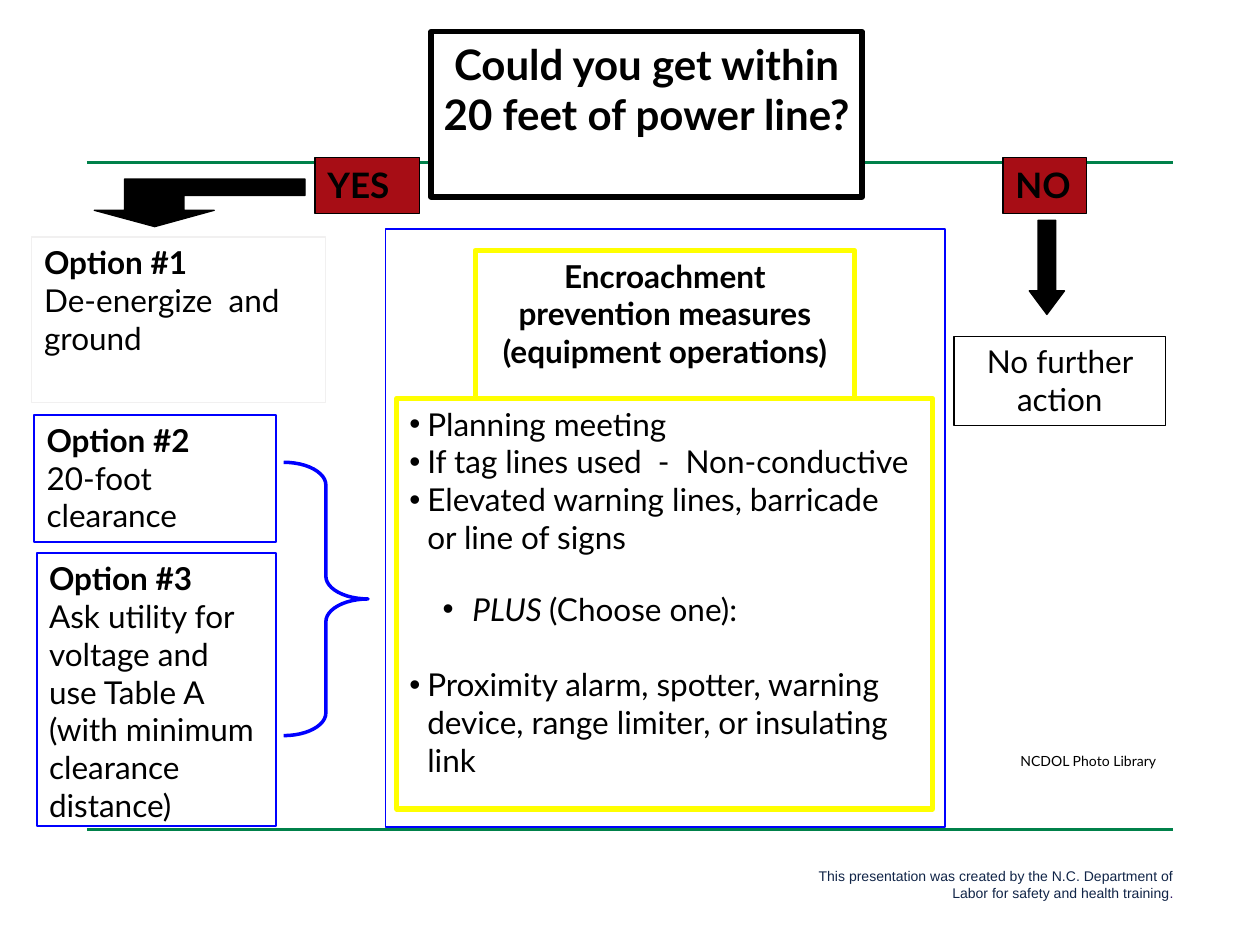
"""Build the power line encroachment decision slide."""
from lxml.etree import SubElement
from pptx import Presentation
from pptx.dml.color import RGBColor
from pptx.enum.shapes import MSO_CONNECTOR, MSO_SHAPE
from pptx.enum.text import MSO_ANCHOR, MSO_AUTO_SIZE, PP_ALIGN
from pptx.oxml.ns import qn
from pptx.util import Cm, Pt

COLORS = {
    "black": "000000", "white": "FFFFFF", "green": "00814A", "red": "A70D15",
    "blue": "0000FF", "yellow": "FFFF00", "pale": "F1F0F0",
    "navy": "102447", "purple": "2B0E62",
}


def rgb(name):
    return RGBColor.from_string(COLORS[name])


class SlideBuilder:
    font = "Lato"

    def __init__(self, slide):
        self.slide = slide

    def paint(self, shape, fill, line, width):
        if fill:
            shape.fill.solid()
            shape.fill.fore_color.rgb = rgb(fill)
        else:
            shape.fill.background()
        shape.line.color.rgb = rgb(line)
        shape.line.width = Pt(width)

    def run(self, paragraph, text, size, bold=False, italic=False, color="black", font=None):
        run = paragraph.add_run()
        run.text = text
        run.font.name = font or self.font
        run.font.size = Pt(size)
        run.font.bold = bold
        run.font.italic = italic
        run.font.color.rgb = rgb(color)

    def frame(self, shape, wrap=True):
        text_frame = shape.text_frame
        text_frame.word_wrap = wrap
        text_frame.auto_size = MSO_AUTO_SIZE.NONE
        text_frame.vertical_anchor = MSO_ANCHOR.TOP
        return text_frame

    def paragraph(self, text_frame, index, align=PP_ALIGN.LEFT):
        paragraph = text_frame.add_paragraph() if index else text_frame.paragraphs[0]
        paragraph.alignment = align
        return paragraph

    def shape(self, kind, box, fill, line, width, adjustments=()):
        shape = self.slide.shapes.add_shape(kind, *map(Cm, box))
        shape.shadow.inherit = False
        self.paint(shape, fill, line, width)
        for index, value in enumerate(adjustments):
            shape.adjustments[index] = value
        return shape

    def box(self, box, lines, fill="white", line="black", width=0.75, size=18,
            bold_lines=1, align=PP_ALIGN.LEFT, wrap=True):
        shape = self.shape(MSO_SHAPE.RECTANGLE, box, fill, line, width)
        text_frame = self.frame(shape, wrap)
        for index, text in enumerate(lines):
            paragraph = self.paragraph(text_frame, index, align)
            self.run(paragraph, text, size, bold=index < bold_lines)

    def text(self, box, runs, align=PP_ALIGN.LEFT):
        shape = self.slide.shapes.add_textbox(*map(Cm, box))
        paragraph = self.paragraph(self.frame(shape), 0, align)
        for text, color, font in runs:
            self.run(paragraph, text, 8, color=color, font=font)

    def rule(self, y):
        left, right = Cm(1.75), Cm(23.65)
        line = self.slide.shapes.add_connector(MSO_CONNECTOR.STRAIGHT, left, Cm(y), right, Cm(y))
        line.line.color.rgb = rgb("green")
        line.line.width = Pt(2)
        SubElement(line._element.spPr, qn("a:effectLst"))

    def outline(self, points):
        start, *rest = [(Cm(x), Cm(y)) for x, y in points]
        builder = self.slide.shapes.build_freeform(*start)
        builder.add_line_segments(rest, close=True)
        shape = builder.convert_to_shape()
        shape.shadow.inherit = False
        self.paint(shape, "black", "black", 0.75)

    def placeholder(self, shape, box, line):
        shape.left, shape.top, shape.width, shape.height = map(Cm, box)
        self.paint(shape, "white", line, 3)
        self.slide.shapes._spTree.append(shape._element)
        return self.frame(shape)

    def title(self, box, text):
        text_frame = self.placeholder(self.slide.shapes.title, box, "black")
        paragraph = self.paragraph(text_frame, 0, PP_ALIGN.CENTER)
        self.run(paragraph, text, 24, bold=True)

    def bullets(self, box, items):
        text_frame = self.placeholder(self.slide.placeholders[1], box, "yellow")
        for index, (lines, margin, hanging, before, after) in enumerate(items):
            paragraph = self.paragraph(text_frame, index)
            properties = paragraph._p.get_or_add_pPr()
            properties.set("marL", str(Cm(margin)))
            properties.set("indent", str(-Cm(hanging)))
            paragraph.space_before, paragraph.space_after = Pt(before), Pt(after)
            for number, runs in enumerate(lines):
                if number:
                    paragraph.add_line_break()
                for text, italic in runs:
                    self.run(paragraph, text, 18, italic=italic)
            paragraph.font.size = Pt(18)


def measure(*lines):
    return [[(line, False)] for line in lines], 0.36, 0.36, 0, 0


def main():
    presentation = Presentation()
    presentation.slide_width, presentation.slide_height = Cm(25.4), Cm(19.05)
    slide = presentation.slides.add_slide(presentation.slide_layouts[1])
    builder = SlideBuilder(slide)

    for y in (3.28, 16.72):
        builder.rule(y)
    builder.text((15.65, 17.37, 8.26, 0.94), [
        ("This presentation was created by the N.C. Department of Labor for safety "
         "and health training", "navy", "Arial"),
        (".", "purple", "Arial"),
    ], PP_ALIGN.RIGHT)

    builder.title((8.69, 0.64, 8.69, 3.33), "Could you get within 20 feet of power line?")
    builder.box((6.35, 3.18, 2.11, 1.12), ["YES"], fill="red", size=20)
    builder.box((20.22, 3.18, 1.68, 1.12), ["NO"], fill="red", size=20, wrap=False)

    builder.box((0.64, 4.78, 5.92, 3.33), ["Option #1", "De-energize  and ground"], line="pale")
    builder.box((9.58, 5.05, 7.65, 3.33),
                ["Encroachment prevention measures", "(equipment operations)"],
                line="yellow", width=3, bold_lines=2, align=PP_ALIGN.CENTER)
    builder.box((0.74, 11.15, 4.83, 5.51),
                ["Option #3", "Ask utility for voltage and", "use Table A",
                 "(with minimum clearance distance)"], line="blue", width=1)
    builder.box((0.69, 8.36, 4.88, 2.57), ["Option #2", "20-foot clearance"],
                line="blue", width=1)
    builder.box((19.23, 6.78, 4.27, 1.8), ["No further action"], bold_lines=0,
                align=PP_ALIGN.CENTER)
    builder.shape(MSO_SHAPE.RIGHT_BRACE, (5.72, 9.32, 1.7, 5.51), None, "blue", 2, (0.27, 0.5))

    builder.bullets((8, 8.03, 10.8, 8.28), [
        measure("Planning meeting"),
        measure("If tag lines used  -  Non-conductive"),
        measure("Elevated warning lines, barricade", "or line of signs"),
        ([[("PLUS ", True), ("(Choose one):", False)]], 1.27, 0.6, 19.5, 21.5),
        measure("Proximity alarm, spotter, warning", "device, range limiter, or insulating",
                "link"),
    ])

    builder.outline([(3.12, 4.57), (4.32, 4.24), (3.71, 4.24), (3.71, 3.94), (6.15, 3.94),
                     (6.15, 3.61), (2.51, 3.61), (2.51, 4.24), (1.9, 4.24)])
    builder.shape(MSO_SHAPE.DOWN_ARROW, (20.75, 4.44, 0.71, 1.9), "black", "black", 0.75,
                  (0.5, 0.67))
    builder.shape(MSO_SHAPE.RECTANGLE, (7.77, 4.62, 11.28, 12.06), None, "blue", 1)
    builder.text((20.32, 15.04, 6.99, 0.61), [("NCDOL Photo Library", "black", "Lato")])

    presentation.save("out.pptx")


if __name__ == "__main__":
    main()
